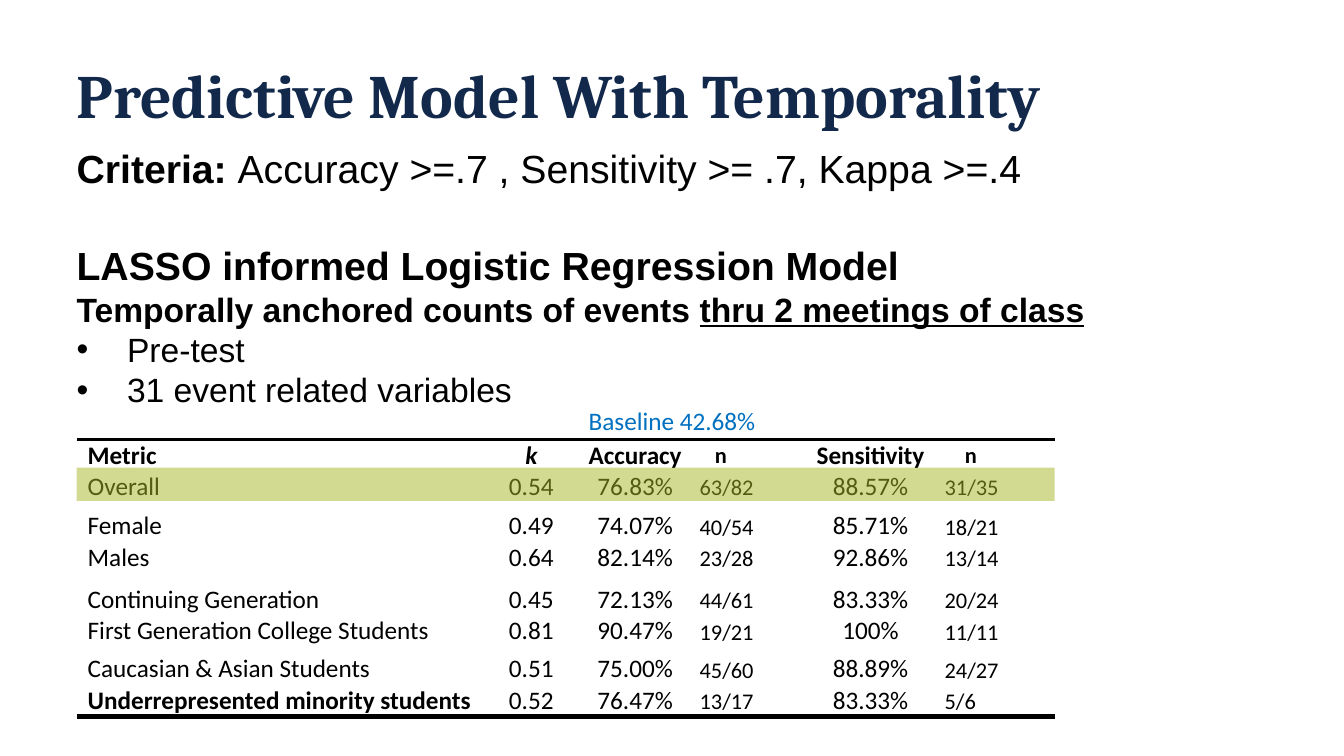
from pptx import Presentation
from pptx.dml.color import RGBColor
from pptx.enum.shapes import MSO_SHAPE
from pptx.enum.text import MSO_ANCHOR, MSO_AUTO_SIZE, PP_ALIGN
from pptx.oxml import parse_xml
from pptx.oxml.ns import nsdecls, qn
from pptx.util import Inches, Pt
from lxml import etree

LEFT, CENTER = PP_ALIGN.LEFT, PP_ALIGN.CENTER
MIDDLE, BOTTOM = MSO_ANCHOR.MIDDLE, MSO_ANCHOR.BOTTOM

# Content
TITLE = "Predictive Model With Temporality"
# (runs as (text, bold, underline), size name, space before, bulleted)
CRITERIA = [
    ([("Criteria: ", True, False),
      ("Accuracy >=.7 , Sensitivity >= .7, Kappa >=.4", False, False)], "lead", 0, False),
    ([("LASSO informed Logistic Regression Model", True, False)], "lead", 36, False),
    ([("Temporally anchored counts of events ", True, False),
      ("thru 2 meetings of class", True, True)], "detail", 0, False),
    ([("Pre-test", False, False)], "detail", 0, True),
    ([("31 event related variables", False, False)], "detail", 0, True),
]
BASELINE = "Baseline 42.68%"
METRICS = [
    ("Metric", "k", "Accuracy", "n", "Sensitivity", "n"),
    ("Overall", "0.54", "76.83%", "63/82", "88.57%", "31/35"),
    ("Female", "0.49", "74.07%", "40/54", "85.71%", "18/21"),
    ("Males", "0.64", "82.14%", "23/28", "92.86%", "13/14"),
    ("Continuing Generation", "0.45", "72.13%", "44/61", "83.33%", "20/24"),
    ("First Generation College Students", "0.81", "90.47%", "19/21", "100%", "11/11"),
    ("Caucasian & Asian Students", "0.51", "75.00%", "45/60", "88.89%", "24/27"),
    ("Underrepresented minority students", "0.52", "76.47%", "13/17", "83.33%", "5/6"),
]
COLUMN_WIDTHS = (4.11, 0.8, 1.26, 0.98, 1.45, 1.1)
ROW_HEIGHTS = (0.28, 0.28, 0.39, 0.28, 0.42, 0.28, 0.38, 0.28)
COUNT_COLUMNS = (3, 5)
HEADER_INSETS = {3: 0.16, 5: 0.21}
# (top, number of rows filled in), from back to front
TABLE_LAYERS = [(4.38, 2), (4.36, len(METRICS))]

THEME = {
    "title_font": "Cambria", "body_font": "Arial", "table_font": "Calibri",
    "navy": RGBColor.from_string("13294B"), "black": RGBColor.from_string("000000"),
    "blue": RGBColor.from_string("0070C0"), "white": RGBColor.from_string("FFFFFF"),
    "highlight": RGBColor.from_string("A6B727"),
    "title": 44, "lead": 28, "detail": 24, "table": 18, "count": 16,
}

# Layout, in inches
MARGIN = 0.76
TABLE_WIDTH = sum(COLUMN_WIDTHS)


def style(font, face, size, color, bold=False):
    font.name, font.size, font.bold = THEME[face], Pt(THEME[size]), bold
    font.color.rgb = THEME[color]


def place(shape, left, top, width, height):
    shape.left, shape.top = Inches(left), Inches(top)
    shape.width, shape.height = Inches(width), Inches(height)


def clear_insets(frame):
    frame.margin_left = frame.margin_top = frame.margin_right = frame.margin_bottom = 0
    frame.auto_size = MSO_AUTO_SIZE.NONE


def set_bullet(paragraph, bulleted):
    properties = paragraph._p.get_or_add_pPr()
    indent = Inches(0.5) if bulleted else 0
    properties.set("marL", str(indent))
    properties.set("indent", str(-indent))
    if bulleted:
        etree.SubElement(properties, qn("a:buFont"), typeface=THEME["body_font"])
        etree.SubElement(properties, qn("a:buChar"), char="•")
    else:
        etree.SubElement(properties, qn("a:buNone"))


def set_borders(cell, **widths):
    """Draw the given sides in black and switch the other sides off."""
    properties = cell._tc.get_or_add_tcPr()
    for index, side in enumerate(("lnL", "lnR", "lnT", "lnB")):
        width = widths.get(side, 0)
        paint = (f'<a:solidFill><a:srgbClr val="{THEME["black"]}"/></a:solidFill>'
                 if width else "<a:noFill/>")
        properties.insert(index, parse_xml(
            f'<a:{side} {nsdecls("a")} w="{Pt(width)}">{paint}</a:{side}>'))


def add_metrics(slide, top, filled_rows):
    metrics = slide.shapes.add_table(
        len(METRICS), len(COLUMN_WIDTHS), Inches(MARGIN), Inches(top),
        Inches(TABLE_WIDTH), Inches(sum(ROW_HEIGHTS))).table
    metrics.first_row = metrics.horz_banding = False
    for column, width in zip(metrics.columns, COLUMN_WIDTHS):
        column.width = Inches(width)
    last_row = len(METRICS) - 1
    for row, values in enumerate(METRICS):
        metrics.rows[row].height = Inches(ROW_HEIGHTS[row])
        is_header = row == 0
        for column, value in enumerate(values):
            cell = metrics.cell(row, column)
            is_count = column in COUNT_COLUMNS
            inset = HEADER_INSETS.get(column, 0.01) if is_header else 0.01
            cell.margin_left = Inches(0.11 if column == 0 else inset)
            cell.margin_right = cell.margin_top = Inches(0.01)
            cell.margin_bottom = 0
            cell.vertical_anchor = MIDDLE if is_header else BOTTOM
            cell.fill.solid()
            cell.fill.fore_color.rgb = THEME["white"]
            set_borders(cell, lnT=2 if is_header else 0, lnB=2 if row == last_row else 0)
            entry = cell.text_frame.paragraphs[0]
            if row < filled_rows:
                cell.text = value
                entry = cell.text_frame.paragraphs[0]
            entry.alignment = LEFT if column == 0 or is_count else CENTER
            style(entry.font, "table_font", "count" if is_count else "table", "black",
                  is_header or (row == last_row and column == 0))
            entry.font.italic = is_header and column == 1


presentation = Presentation()
presentation.slide_width, presentation.slide_height = Inches(13.33), Inches(7.5)
slide = presentation.slides.add_slide(presentation.slide_layouts[1])

# Title
title = slide.shapes.title
place(title, MARGIN, 0.37, 11.65, 1.21)
clear_insets(title.text_frame)
title.text_frame.vertical_anchor = MIDDLE
title.text_frame.text = TITLE
heading = title.text_frame.paragraphs[0]
heading.alignment, heading.line_spacing = LEFT, 0.9
style(heading.font, "title_font", "title", "navy", True)

# Criteria and model description
criteria = slide.placeholders[1]
place(criteria, MARGIN, 1.43, 12.26, 2.93)
clear_insets(criteria.text_frame)
for number, (runs, size, before, bulleted) in enumerate(CRITERIA):
    line = (criteria.text_frame.add_paragraph() if number
            else criteria.text_frame.paragraphs[0])
    set_bullet(line, bulleted)
    line.space_before, line.line_spacing = Pt(before), 1.0
    style(line.font, "body_font", size, "black", runs[0][1])
    for words, bold, underline in runs:
        run = line.add_run()
        run.text = words
        if len(runs) > 1:
            run.font.bold, run.font.underline = bold, underline

# Baseline label
baseline = slide.shapes.add_textbox(Inches(5.74), Inches(3.97), Inches(2.29), Inches(0.4))
baseline.text_frame.word_wrap = True
baseline.text_frame.text = BASELINE
style(baseline.text_frame.paragraphs[0].font, "table_font", "table", "blue")

# Metrics table, with its edge layer behind it
for layer_top, filled in TABLE_LAYERS:
    add_metrics(slide, layer_top, filled)

# Highlight over the overall row
highlight = slide.shapes.add_shape(
    MSO_SHAPE.RECTANGLE, Inches(MARGIN), Inches(4.64), Inches(TABLE_WIDTH), Inches(0.33))
highlight.shadow.inherit = False
highlight.line.fill.background()
highlight.fill.solid()
highlight.fill.fore_color.rgb = THEME["highlight"]
tint = highlight._element.spPr.find(qn("a:solidFill"))[0]
etree.SubElement(tint, qn("a:alpha"), val="50000")

presentation.save("out.pptx")
